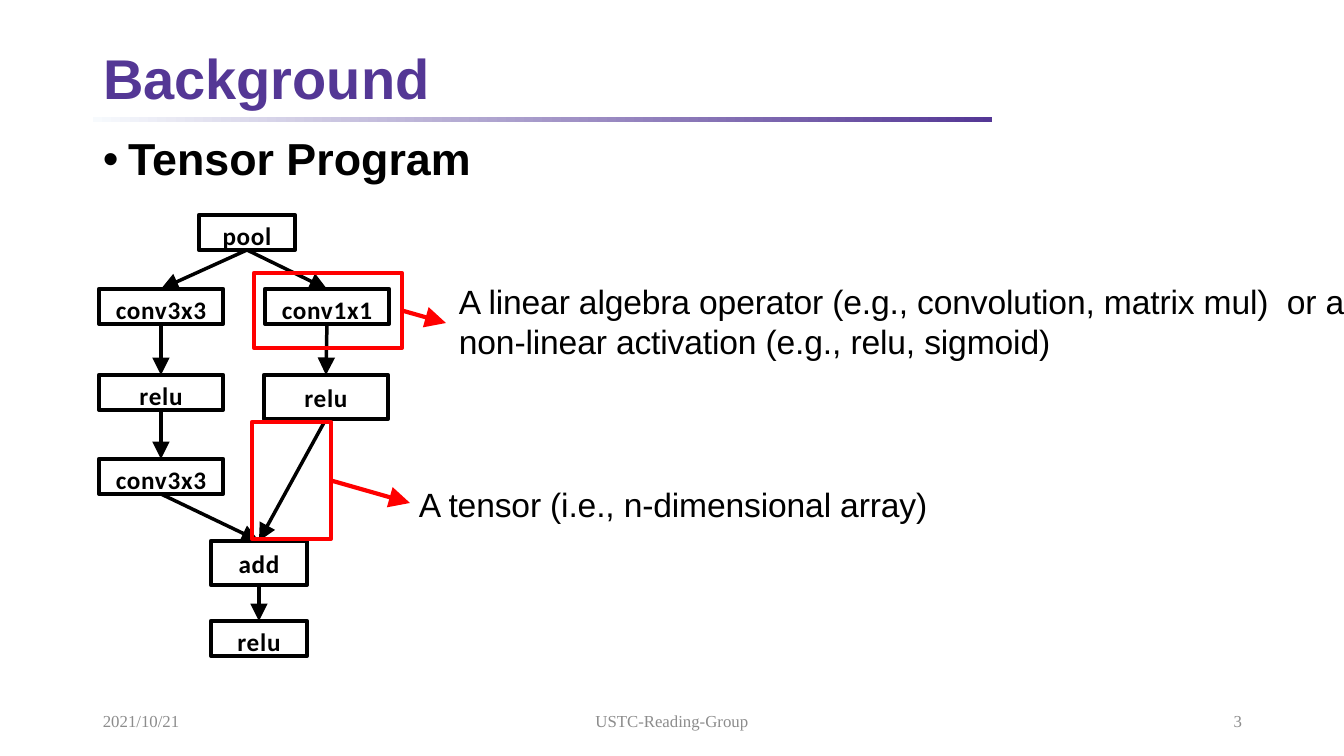
from dataclasses import dataclass
from lxml.etree import SubElement
from pptx import Presentation
from pptx.dml.color import RGBColor as RGB
from pptx.enum.shapes import MSO_CONNECTOR as LINK, MSO_SHAPE as SHAPE
from pptx.enum.text import MSO_ANCHOR as ANCHOR, PP_ALIGN as ALIGN
from pptx.oxml.ns import qn
from pptx.util import Pt


@dataclass(frozen=True)
class Theme:
    black: RGB = RGB(0, 0, 0)
    red: RGB = RGB(255, 0, 0)
    grey: RGB = RGB(0x8C, 0x8C, 0x8C)
    purple: RGB = RGB(0x54, 0x37, 0x95)
    pale: RGB = RGB(0xF7, 0xFA, 0xFD)
    sans: str = "Arial"
    label: str = "Calibri"
    serif: str = "Times New Roman"
    title: int = 40
    head: int = 32
    note: int = 24
    node: int = 18
    foot: int = 12
    edge: float = 3
    arrow: float = 2.5


TITLE = ("Background", (93, 43, 1159, 76))
HEAD = ("Tensor Program", (93, 132, 1159, 547))
RULE = (93, 117, 899, 5)
FOOT = [
    ("2021/10/21", (93, 701, 302, 40), ALIGN.LEFT),
    ("USTC-Reading-Group", (445, 701, 454, 40), ALIGN.CENTER),
    ("3", (950, 701, 302, 40), ALIGN.RIGHT),
]
NODES = {
    "pool": ("pool", (199, 215, 96, 35)),
    "left conv": ("conv3x3", (99, 289, 124, 35)),
    "right conv": ("conv1x1", (265, 289, 124, 35)),
    "left relu": ("relu", (99, 375, 124, 35)),
    "right relu": ("relu", (264, 375, 124, 44)),
    "low conv": ("conv3x3", (99, 459, 124, 35)),
    "add": ("add", (211, 541, 96, 44)),
    "last relu": ("relu", (211, 621, 96, 35)),
}
EDGES = [
    ("pool", "left conv"), ("pool", "right conv"),
    ("left conv", "left relu"), ("right conv", "right relu"),
    ("left relu", "low conv"), ("low conv", "add"),
    ("right relu", "add"), ("add", "last relu"),
]
NOTES = [
    ("A linear algebra operator (e.g., convolution, matrix mul)  or "
     "a non-linear activation (e.g., relu, sigmoid)",
     (459, 281, 886, 80), (254, 273, 148, 75), (446, 323)),
    ("A tensor (i.e., n-dimensional array)",
     (419, 484, 554, 42), (252, 422, 79, 117), (410, 503)),
]

SCALE = 914400 / 100.8
theme = Theme()


def px(*vals):
    return [round(v * SCALE) for v in vals]


def write(frame, text, face, size, color, bold=False, space=0,
          align=ALIGN.LEFT):
    frame.word_wrap = True
    para = frame.paragraphs[0]
    para.alignment = align
    run = para.add_run()
    run.text = text
    font = run.font
    font.name, font.size, font.bold = face, Pt(size), bold
    font.color.rgb = color
    if space:
        run._r.get_or_add_rPr().set("spc", str(space))
    return para


def inset(frame, top=0):
    frame.margin_left = frame.margin_right = frame.margin_bottom = 0
    frame.margin_top = px(top)[0]


def box(area, color):
    shape = slide.shapes.add_shape(SHAPE.RECTANGLE, *px(*area))
    shape.shadow.inherit = False
    shape.fill.background()
    shape.line.color.rgb = color
    shape.line.width = Pt(theme.edge)
    return shape


def arrow(start, side, color, width, end=None, tip=(0, 0)):
    line = slide.shapes.add_connector(LINK.STRAIGHT, 0, 0, *px(*tip))
    line.begin_connect(start, side)
    if end is not None:
        line.end_connect(end, 0)
    line.line.color.rgb = color
    line.line.width = Pt(width)
    SubElement(line.line._get_or_add_ln(), qn("a:tailEnd"),
               type="triangle", w="lg", len="lg")
    SubElement(line._element.spPr, qn("a:effectLst"))


deck = Presentation()
deck.slide_width, deck.slide_height = px(1344, 756)
slide = deck.slides.add_slide(deck.slide_layouts[5])

rule = slide.shapes.add_shape(SHAPE.RECTANGLE, *px(*RULE))
rule.shadow.inherit = False
rule.line.fill.background()
rule.fill.gradient()
rule.fill.gradient_angle = 0
for stop, color in zip(rule.fill.gradient_stops, (theme.pale, theme.purple)):
    stop.color.rgb = color

text, area = TITLE
title = slide.shapes.title
title.left, title.top, title.width, title.height = px(*area)
title.text_frame.vertical_anchor = ANCHOR.MIDDLE
para = write(title.text_frame, text, theme.sans, theme.title, theme.purple, True)
para.line_spacing = 0.9

text, area = HEAD
body = slide.shapes.add_textbox(*px(*area))
para = write(body.text_frame, text, theme.sans, theme.head, theme.black, True)
props = para._p.get_or_add_pPr()
props.set("marL", "228600")
props.set("indent", "-228600")
SubElement(props, qn("a:buFont"), typeface=theme.sans)
SubElement(props, qn("a:buChar"), char="•")
para.line_spacing = 0.9

for text, area, align in FOOT:
    frame = slide.shapes.add_textbox(*px(*area)).text_frame
    frame.vertical_anchor = ANCHOR.MIDDLE
    write(frame, text, theme.serif, theme.foot, theme.grey, align=align)

nodes = {}
for name, (text, area) in NODES.items():
    nodes[name] = box(area, theme.black)
    frame = nodes[name].text_frame
    inset(frame, area[3] // 6)
    frame.vertical_anchor = ANCHOR.TOP
    write(frame, text, theme.label, theme.node, theme.black, True, 50,
          ALIGN.CENTER)

for start, end in EDGES:
    arrow(nodes[start], 2, theme.black, theme.arrow, nodes[end])

for text, area, mark, tip in NOTES:
    arrow(box(mark, theme.red), 3, theme.red, theme.edge, tip=tip)
    frame = slide.shapes.add_textbox(*px(*area)).text_frame
    inset(frame)
    write(frame, text, theme.sans, theme.note, theme.black, space=-10)

deck.save("out.pptx")
